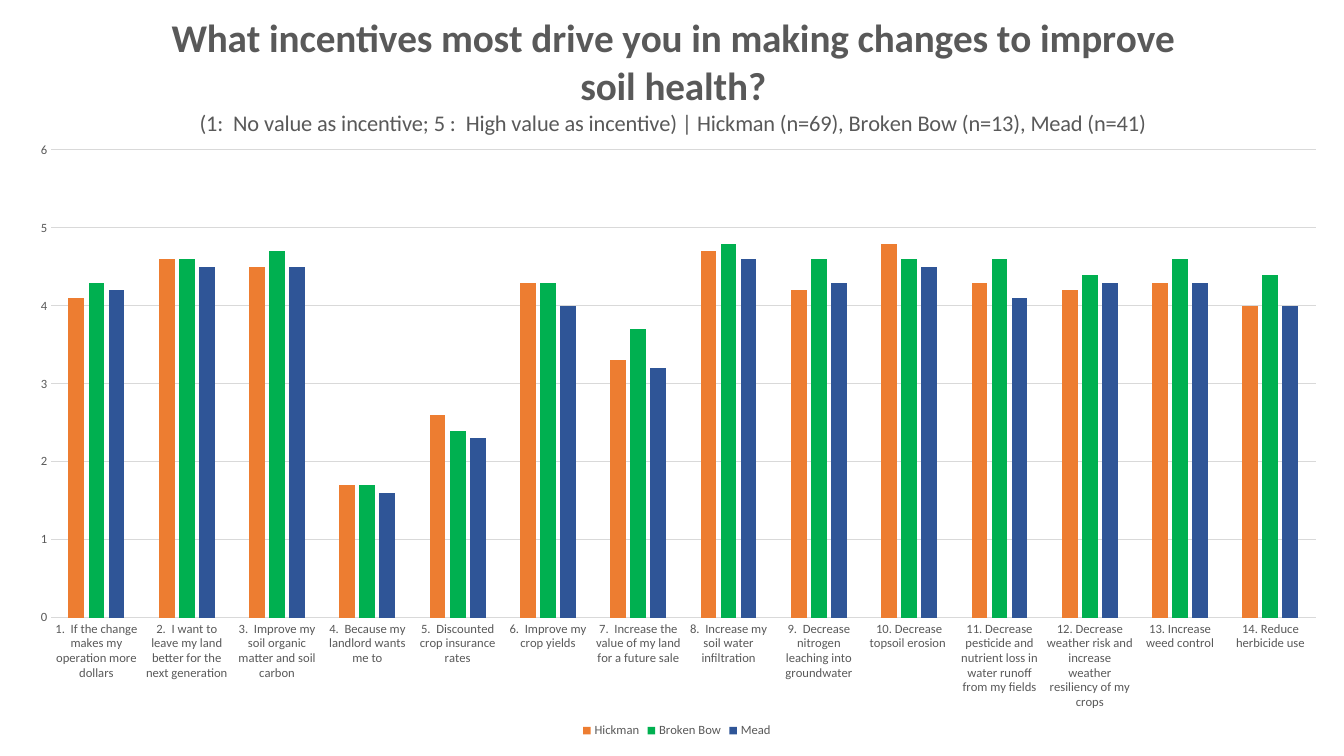
from lxml import etree
from pptx import Presentation
from pptx import util as u
from pptx.chart import data as chart_data
from pptx.dml import color
from pptx.enum import chart as kinds
from pptx.oxml import ns

COLORS = {"text": "595959", "line": "D9D9D9", "Hickman": "ED7D31",
          "Broken Bow": "00B050", "Mead": "2F5597"}
FONT = "Calibri"

INCENTIVES = [
    "1.  If the change makes my operation more dollars",
    "2.  I want to leave my land better for the next generation",
    "3.  Improve my soil organic matter and soil carbon",
    "4.  Because my landlord wants me to",
    "5.  Discounted crop insurance rates",
    "6.  Improve my crop yields",
    "7.  Increase the value of my land for a future sale",
    "8.  Increase my soil water infiltration",
    "9.  Decrease nitrogen leaching into groundwater",
    "10. Decrease topsoil erosion ",
    "11. Decrease pesticide and nutrient loss in water runoff from my fields",
    "12. Decrease weather risk and increase weather resiliency of my crops",
    "13. Increase weed control",
    "14. Reduce herbicide use",
]
RATINGS = {
    "Hickman": [4.1, 4.6, 4.5, 1.7, 2.6, 4.3, 3.3, 4.7, 4.2, 4.8, 4.3, 4.2, 4.3, 4],
    "Broken Bow": [4.3, 4.6, 4.7, 1.7, 2.4, 4.3, 3.7, 4.8, 4.6, 4.6, 4.6, 4.4, 4.6, 4.4],
    "Mead": [4.2, 4.5, 4.5, 1.6, 2.3, 4, 3.2, 4.6, 4.3, 4.5, 4.1, 4.3, 4.3, 4],
}
TITLE = [
    ("What incentives most drive you in making changes to improve soil health?", 28, True),
    ("(1:  No value as incentive; 5 :  High value as incentive) | "
     "Hickman (n=69), Broken Bow (n=13), Mead (n=41)", 16, False),
]


def rgb(name):
    return color.RGBColor.from_string(COLORS[name])


def set_values(target, **values):
    for name, value in values.items():
        setattr(target, name, value)


def style_font(font, size, bold=False):
    set_values(font, name=FONT, size=u.Pt(size), bold=bold)
    font.color.rgb = rgb("text")


def style_line(line):
    line.color.rgb = rgb("line")
    line.width = u.Pt(0.75)


def place_part(part, index, **settings):
    """Fix a chart part at fractions of the chart; index is the layout's place in it."""
    for old in part.findall(ns.qn("c:layout")):
        part.remove(old)
    layout = etree.Element(ns.qn("c:layout"))
    part.insert(index, layout)
    manual = etree.SubElement(layout, ns.qn("c:manualLayout"))
    for tag, value in settings.items():
        etree.SubElement(manual, ns.qn(f"c:{tag}")).set("val", str(value))


def add_title(chart):
    title = chart.chart_title
    for index, (words, size, bold) in enumerate(TITLE):
        frame = title.text_frame
        para = frame.add_paragraph() if index else frame.paragraphs[0]
        span = para.add_run()
        span.text = words
        style_font(span.font, size, bold)
    title.include_in_layout = False
    place_part(title._element, 1, xMode="edge", yMode="edge", x=0.11, y=0)


def style_axes(chart):
    for axis in (chart.category_axis, chart.value_axis):
        set_values(axis, major_tick_mark=kinds.XL_TICK_MARK.NONE,
                   minor_tick_mark=kinds.XL_TICK_MARK.NONE)
        style_font(axis.tick_labels.font, 9)
    style_line(chart.category_axis.format.line)
    set_values(chart.value_axis, minimum_scale=0, maximum_scale=6, major_unit=1,
               has_major_gridlines=True)
    style_line(chart.value_axis.major_gridlines.format.line)
    chart.value_axis.format.line.fill.background()


def add_legend(chart):
    chart.has_legend = True
    set_values(chart.legend, position=kinds.XL_LEGEND_POSITION.BOTTOM,
               include_in_layout=False)
    style_font(chart.legend.font, 9)


def add_rating_chart(page):
    table = chart_data.CategoryChartData()
    table.categories = INCENTIVES
    for place, ratings in RATINGS.items():
        table.add_series(place, ratings)
    chart = page.shapes.add_chart(
        kinds.XL_CHART_TYPE.COLUMN_CLUSTERED,
        u.Pt(18), u.Pt(8), u.Pt(931), u.Pt(522), table).chart
    style_font(chart.font, 10)

    # Columns
    plot = chart.plots[0]
    set_values(plot, gap_width=219, overlap=-27, vary_by_categories=False)
    for series in plot.series:
        series.format.fill.solid()
        series.format.fill.fore_color.rgb = rgb(series.name)

    # Plot area, below the title
    place_part(plot._element.getparent(), 0, layoutTarget="inner",
               xMode="edge", yMode="edge", x=0.02, y=0.19, w=0.97, h=0.64)
    return chart


def main():
    deck = Presentation()
    set_values(deck, slide_width=u.Pt(960), slide_height=u.Pt(540))
    page = deck.slides.add_slide(deck.slide_layouts[6])

    # Chart and its parts
    chart = add_rating_chart(page)
    add_title(chart)
    style_axes(chart)
    add_legend(chart)

    deck.save("out.pptx")


if __name__ == "__main__":
    main()
